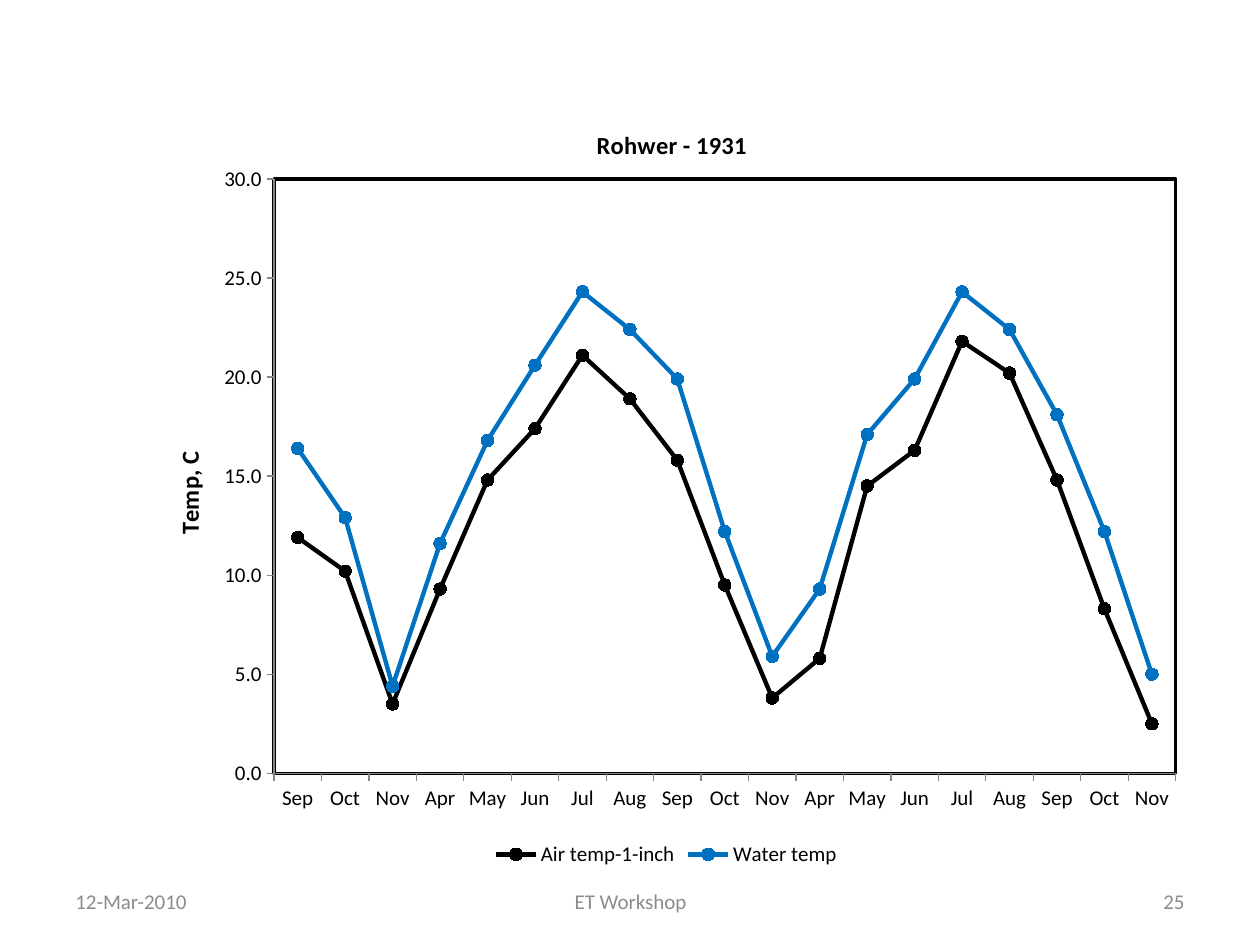
from dataclasses import dataclass

from lxml import etree
from pptx import Presentation
from pptx.chart.data import CategoryChartData
from pptx.dml.color import RGBColor
from pptx.enum.chart import XL_CHART_TYPE, XL_LEGEND_POSITION, XL_MARKER_STYLE, XL_TICK_MARK
from pptx.enum.text import MSO_ANCHOR, PP_ALIGN
from pptx.oxml import parse_xml
from pptx.oxml.ns import nsdecls, qn
from pptx.util import Inches, Pt

LINE_MARKERS = XL_CHART_TYPE.LINE_MARKERS
LEGEND_BOTTOM = XL_LEGEND_POSITION.BOTTOM
CIRCLE = XL_MARKER_STYLE.CIRCLE
TICK_OUTSIDE, TICK_NONE = XL_TICK_MARK.OUTSIDE, XL_TICK_MARK.NONE
MIDDLE = MSO_ANCHOR.MIDDLE
LEFT, CENTER, RIGHT = PP_ALIGN.LEFT, PP_ALIGN.CENTER, PP_ALIGN.RIGHT


@dataclass(frozen=True)
class Theme:
    font: str = "Calibri"
    text: str = "000000"
    footer: str = "8C8C8C"
    axis: str = "868686"
    air: str = "000000"
    water: str = "0070C0"
    water_marker_edge: str = "C6D9F1"
    body_size: int = 12
    title_size: int = 14
    line_width: float = 2.5
    frame_width: float = 2
    marker_size: int = 7


THEME = Theme()
SLIDE_WIDTH, SLIDE_HEIGHT = Inches(10), Inches(7.5)

SEASON = ["Apr", "May", "Jun", "Jul", "Aug", "Sep", "Oct", "Nov"]
MONTHS = SEASON[-3:] + SEASON * 2
AIR_TEMPERATURES = [11.9, 10.2, 3.5, 9.3, 14.8, 17.4, 21.1, 18.9, 15.8, 9.5,
                    3.8, 5.8, 14.5, 16.3, 21.8, 20.2, 14.8, 8.3, 2.5]
WATER_TEMPERATURES = [16.4, 12.9, 4.4, 11.6, 16.8, 20.6, 24.3, 22.4, 19.9, 12.2,
                      5.9, 9.3, 17.1, 19.9, 24.3, 22.4, 18.1, 12.2, 5.0]


def style_font(font, size, color, bold=False):
    font.name = THEME.font
    font.size = Pt(size)
    font.bold = bold
    font.color.rgb = RGBColor.from_string(color)


def add_footer(slide, text, left, width, alignment):
    """Place a footer text; left and width are shares of the slide's width."""
    box = slide.shapes.add_textbox(
        int(SLIDE_WIDTH * left), Inches(6.95), int(SLIDE_WIDTH * width), Inches(0.4))
    frame = box.text_frame
    frame.word_wrap = True
    frame.vertical_anchor = MIDDLE
    frame.text = text
    paragraph = frame.paragraphs[0]
    paragraph.alignment = alignment
    style_font(paragraph.runs[0].font, THEME.body_size, THEME.footer)


def set_layout(element, index, **shares):
    """Fix a chart part's place by shares of the chart's size."""
    for old_layout in element.findall(qn("c:layout")):
        element.remove(old_layout)
    layout = parse_xml(f"<c:layout {nsdecls('c')}><c:manualLayout/></c:layout>")
    settings = {"xMode": "edge", "yMode": "edge", **shares}
    if "w" in shares:
        settings = {"layoutTarget": "inner", **settings}
    for name, value in settings.items():
        etree.SubElement(layout[0], qn(f"c:{name}"), val=str(value))
    element.insert(index, layout)


def style_title(title, text, x, y):
    title.text_frame.text = text
    run = title.text_frame.paragraphs[0].runs[0]
    style_font(run.font, THEME.title_size, THEME.text, bold=True)
    element = title.text_frame._txBody.getparent().getparent()
    set_layout(element, 1, x=x, y=y)
    return element


def frame_plot(chart):
    plot_area = chart.plots[0]._element.getparent()
    set_layout(plot_area, 0, x=0.13, y=0.12, w=0.85, h=0.755)
    plot_area.append(parse_xml(
        f"<c:spPr {nsdecls('c', 'a')}><a:noFill/>"
        f"<a:ln w='{Pt(THEME.frame_width)}'><a:solidFill>"
        f"<a:srgbClr val='{THEME.text}'/></a:solidFill></a:ln></c:spPr>"))


def style_axis(axis):
    axis.has_major_gridlines = False
    axis.major_tick_mark = TICK_OUTSIDE
    axis.minor_tick_mark = TICK_NONE
    axis.format.line.color.rgb = RGBColor.from_string(THEME.axis)
    axis.format.line.width = Pt(0.75)
    style_font(axis.tick_labels.font, THEME.body_size, THEME.text)


def style_series(series, color, marker_edge=None):
    series.smooth = False
    rgb = RGBColor.from_string(color)
    series.format.line.color.rgb = rgb
    series.format.line.width = Pt(THEME.line_width)
    marker = series.marker
    marker.style = CIRCLE
    marker.size = THEME.marker_size
    marker.format.fill.solid()
    marker.format.fill.fore_color.rgb = rgb
    if marker_edge:
        marker.format.line.color.rgb = RGBColor.from_string(marker_edge)
    else:
        marker.format.line.fill.background()


def add_temperature_chart(slide):
    data = CategoryChartData(number_format="0.0")
    data.categories = MONTHS
    data.add_series("Air temp-1-inch", AIR_TEMPERATURES)
    data.add_series("Water temp", WATER_TEMPERATURES)
    chart = slide.shapes.add_chart(
        LINE_MARKERS, Inches(1.08), Inches(0.67), Inches(8.42), Inches(6.25), data).chart
    style_font(chart.font, THEME.body_size, THEME.text)

    chart.has_title = True
    title = style_title(chart.chart_title, "Rohwer - 1931", x=0.43, y=0.05)
    title.find(qn("c:overlay")).set("val", "1")

    chart.has_legend = True
    chart.legend.position = LEGEND_BOTTOM
    chart.legend.include_in_layout = False
    style_font(chart.legend.font, THEME.body_size, THEME.text)

    for axis in (chart.category_axis, chart.value_axis):
        style_axis(axis)
    value_axis = chart.value_axis
    value_axis.minimum_scale, value_axis.maximum_scale = 0, 30
    value_axis.major_unit = 5
    value_axis.tick_labels.number_format = "0.0"
    value_axis.tick_labels.number_format_is_linked = False
    style_title(value_axis.axis_title, "Temp, C", x=0.03, y=0.46)

    plot = chart.plots[0]
    plot.vary_by_categories = False
    air, water = plot.series
    style_series(air, THEME.air)
    style_series(water, THEME.water, THEME.water_marker_edge)
    frame_plot(chart)


def main():
    presentation = Presentation()
    presentation.slide_width, presentation.slide_height = SLIDE_WIDTH, SLIDE_HEIGHT
    slide = presentation.slides.add_slide(presentation.slide_layouts[6])
    add_footer(slide, "25", 0.717, 0.233, RIGHT)
    add_footer(slide, "ET Workshop", 0.342, 0.317, CENTER)
    add_footer(slide, "12-Mar-2010", 0.05, 0.233, LEFT)
    add_temperature_chart(slide)
    presentation.save("out.pptx")


if __name__ == "__main__":
    main()
